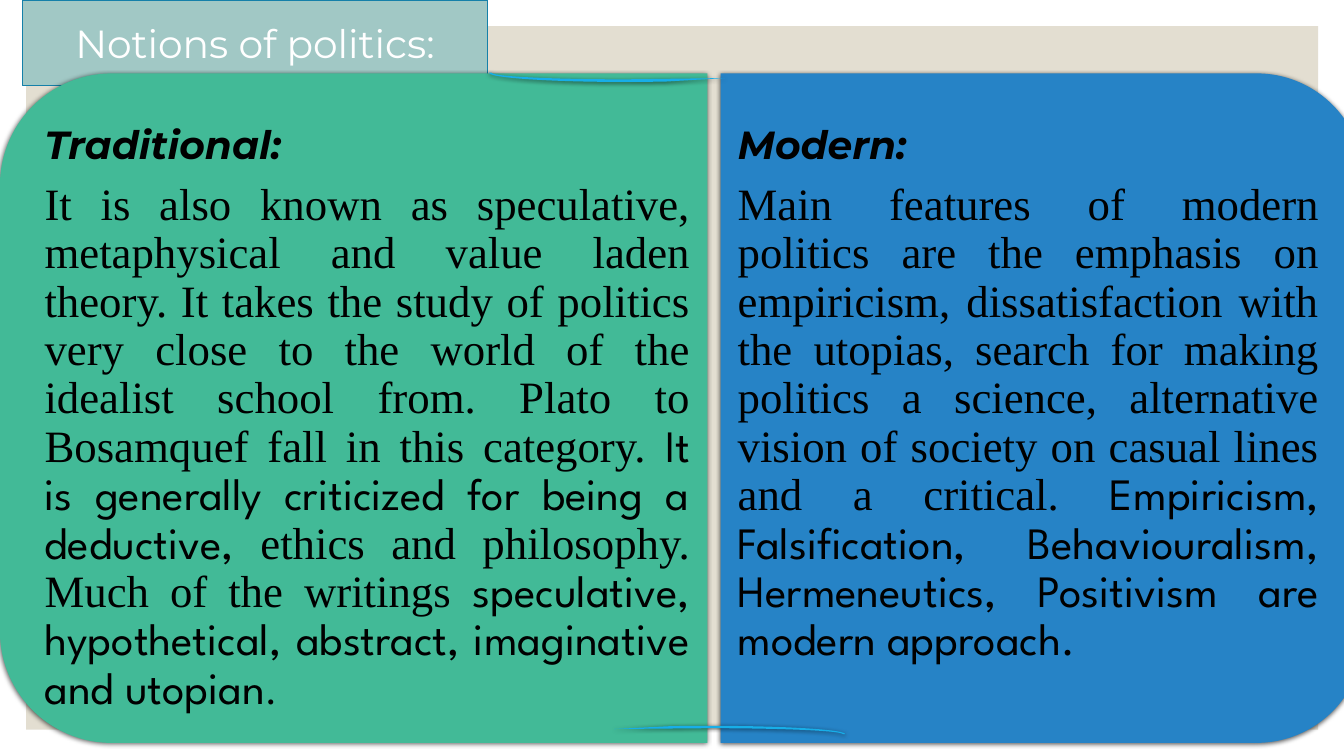
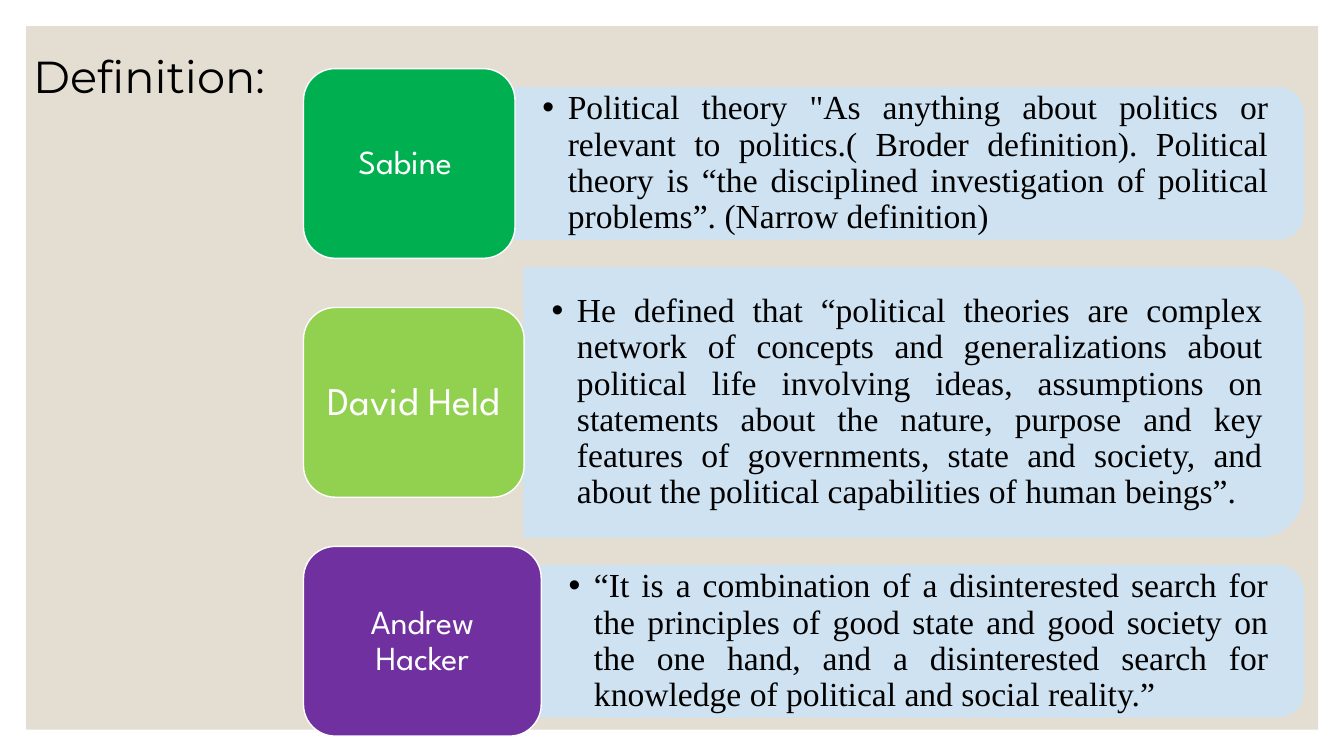
from lxml.etree import SubElement
from pptx import Presentation
from pptx.dml.color import RGBColor
from pptx.enum.shapes import MSO_SHAPE
from pptx.enum.text import MSO_ANCHOR, MSO_AUTO_SIZE, PP_ALIGN
from pptx.oxml.ns import qn
from pptx.util import Cm, Pt

BLACK = RGBColor(0x00, 0x00, 0x00)
WHITE = RGBColor(0xFF, 0xFF, 0xFF)
SAND = RGBColor(0xE3, 0xDE, 0xD1)
MIST = RGBColor(0xA1, 0xC8, 0xC5)
TEAL = RGBColor(0x15, 0x80, 0xA9)
MINT = RGBColor(0x42, 0xBA, 0x97)
BLUE = RGBColor(0x26, 0x83, 0xC6)
CYAN = RGBColor(0x17, 0xAE, 0xE8)
PALE_BLUE = RGBColor(0xCD, 0xE3, 0xF5)
GREEN = RGBColor(0x00, 0xB0, 0x50)
LIME = RGBColor(0x92, 0xD0, 0x50)
PURPLE = RGBColor(0x70, 0x30, 0xA0)

TITLE_FONT = "Montserrat"
SANS = "League Spartan"
SERIF = "Times New Roman"

CORNER_INSET = 0.0488
SWOOSH_ARC = (0.125, 11.423, 204.577, 108, 0.125)

LABEL_LEFT = 7.65
LABEL_TOP = 1.73
LABEL_HEIGHT = 4.78
LABEL_PITCH = 6.02
PANEL_RIGHT = 32.84

TRADITIONAL = [
    ("It is also known as speculative, metaphysical and value laden theory. "
     "It takes the study of politics very close to the world of the idealist "
     "school from. Plato to Bosamquef fall in this category.", SERIF, 32),
    (" It is generally criticized for being a deductive,", SANS, 32),
    (" ethics and philosophy. Much of the writings ", SERIF, 32),
    ("speculative, hypothetical, abstract, imaginative and utopian", SANS, 32),
    (".", SANS, 28),
]
MODERN = [
    ("Main features of modern politics are the emphasis on empiricism, "
     "dissatisfaction with the utopias, search for making politics a science, "
     "alternative vision of society on casual lines and a critical. ", SERIF, 32),
    ("Empiricism, Falsification, Behaviouralism, Hermeneutics, Positivism "
     "are modern approach.", SANS, 32),
]
DEFINITIONS = [
    ("Sabine ", 24, GREEN, 5.33, 3.81,
     "Political theory \"As anything about politics or relevant to politics."
     "( Broder definition). Political theory is “the disciplined investigation "
     "of political problems”. (Narrow definition)"),
    ("David Held", 28, LIME, 5.56, 6.78,
     "He defined that “political theories are complex network of concepts and "
     "generalizations about political life involving ideas, assumptions on "
     "statements about the nature, purpose and key features of governments, "
     "state and society, and about the political capabilities of human beings”."),
    ("Andrew Hacker", 24, PURPLE, 5.99, 3.81,
     "“It is a combination of a disinterested search for the principles of good "
     "state and good society on the one hand, and a disinterested search for "
     "knowledge of political and social reality.”"),
]


def add_run(paragraph, text, font, size, color=BLACK, emphasis=False):
    run = paragraph.add_run()
    run.text = text
    run.font.name = font
    run.font.size = Pt(size)
    run.font.color.rgb = color
    run.font.bold = emphasis
    run.font.italic = emphasis


def format_paragraph(paragraph, align, after):
    paragraph.alignment = align
    paragraph.line_spacing = 0.9
    paragraph.space_after = Pt(after)


def set_insets(frame, left, top, right, bottom):
    frame.margin_left, frame.margin_top = Cm(left), Cm(top)
    frame.margin_right, frame.margin_bottom = Cm(right), Cm(bottom)


def add_preset(slide, preset, left, top, width, height, fill, line=None):
    shape = slide.shapes.add_shape(preset, Cm(left), Cm(top), Cm(width), Cm(height))
    shape.shadow.inherit = False
    shape.fill.solid()
    shape.fill.fore_color.rgb = fill
    if line is None:
        shape.line.fill.background()
    else:
        shape.line.color.rgb = line
        shape.line.width = Pt(1)
    return shape


def add_soft_shadow(shape):
    effects = shape._element.spPr.find(qn("a:effectLst"))
    shadow = SubElement(effects, qn("a:outerShdw"), blurRad=str(Pt(3)),
                        dist=str(Pt(1)), dir="5400000", rotWithShape="0")
    black = SubElement(shadow, qn("a:srgbClr"), val="000000")
    SubElement(black, qn("a:alpha"), val="63000")


def add_panel(slide, left, top, width, height, rotation, fill, line=None):
    shift = (width - height) / 2
    panel = add_preset(slide, MSO_SHAPE.ROUND_2_SAME_RECTANGLE, left + shift,
                       top - shift, height, width, fill, line)
    panel.rotation = rotation
    inset = height * CORNER_INSET
    text_left = left + inset if rotation == 270 else left
    box = slide.shapes.add_textbox(Cm(text_left), Cm(top + inset),
                                   Cm(width - inset), Cm(height - 2 * inset))
    box.text_frame.word_wrap = True
    return panel, box.text_frame


def add_notion(slide, left, width, rotation, fill, insets, heading, passages):
    panel, frame = add_panel(slide, left, 1.85, width, 16.87, rotation, fill)
    add_soft_shadow(panel)
    set_insets(frame, *insets)
    opening = frame.paragraphs[0]
    format_paragraph(opening, PP_ALIGN.LEFT, 10)
    add_run(opening, heading, TITLE_FONT, 28, emphasis=True)
    body = frame.add_paragraph()
    format_paragraph(body, PP_ALIGN.JUSTIFY, 11)
    for text, font, size in passages:
        add_run(body, text, font, size)


def add_swoosh(slide, left, top, height, rotation):
    swoosh = add_preset(slide, MSO_SHAPE.CIRCULAR_ARROW, left, top, 6.93, height, CYAN)
    for index, value in enumerate(SWOOSH_ARC):
        swoosh.adjustments[index] = value
    swoosh.rotation = rotation
    swoosh._element.spPr.find(qn("a:xfrm")).set("flipV", "1")
    add_soft_shadow(swoosh)


def add_bullet(paragraph):
    properties = paragraph._p.get_or_add_pPr()
    properties.set("marL", str(Cm(0.64)))
    properties.set("indent", str(Cm(-0.64)))
    SubElement(properties, qn("a:buFont"), typeface="Arial")
    SubElement(properties, qn("a:buChar"), char="•")


def add_definition(slide, row, author, size, color, width, height, text):
    label_top = LABEL_TOP + row * LABEL_PITCH
    left = LABEL_LEFT + width
    top = label_top + (LABEL_HEIGHT - height) / 2
    panel, frame = add_panel(slide, left, top, PANEL_RIGHT - left, height, 90,
                             PALE_BLUE, PALE_BLUE)
    for tint in panel._element.spPr.iter(qn("a:srgbClr")):
        SubElement(tint, qn("a:alpha"), val="90000")
    frame.vertical_anchor = MSO_ANCHOR.MIDDLE
    set_insets(frame, 0.69, 0.36, 0.69, 0.36)
    definition = frame.paragraphs[0]
    format_paragraph(definition, PP_ALIGN.JUSTIFY, 4)
    add_bullet(definition)
    add_run(definition, text, SERIF, 24)

    label = add_preset(slide, MSO_SHAPE.ROUNDED_RECTANGLE, LABEL_LEFT, label_top,
                       width, LABEL_HEIGHT, color, WHITE)
    label.text_frame.word_wrap = True
    label.text_frame.vertical_anchor = MSO_ANCHOR.MIDDLE
    name = label.text_frame.paragraphs[0]
    format_paragraph(name, PP_ALIGN.CENTER, 8)
    add_run(name, author, SANS, size, WHITE)


def add_titled_slide(deck, text, box, size, color, align):
    slide = deck.slides.add_slide(deck.slide_layouts[5])
    title = slide.shapes.title
    title.left, title.top, title.width, title.height = (Cm(length) for length in box)
    frame = title.text_frame
    frame.word_wrap = True
    frame.auto_size = MSO_AUTO_SIZE.NONE
    frame.vertical_anchor = MSO_ANCHOR.MIDDLE
    frame.paragraphs[0].alignment = align
    add_run(frame.paragraphs[0], text, TITLE_FONT, size, color)
    return slide


def add_backdrop(slide):
    backdrop = add_preset(slide, MSO_SHAPE.RECTANGLE, 0.66, 0.66, 32.56, 17.73, SAND)
    slide.slide_layout.shapes._spTree.insert(2, backdrop._element)


def style_title_tab(title):
    outline = SubElement(title._element.spPr, qn("a:prstGeom"), prst="round2DiagRect")
    SubElement(outline, qn("a:avLst"))
    title.fill.solid()
    title.fill.fore_color.rgb = MIST
    title.line.color.rgb = TEAL
    title.line.width = Pt(1)


def build_notions(deck):
    slide = add_titled_slide(deck, "Notions of politics:", (0.56, 0, 11.73, 2.16),
                             28, WHITE, PP_ALIGN.CENTER)
    add_backdrop(slide)
    style_title_tab(slide.shapes.title)
    add_notion(slide, 0, 17.83, 270, MINT, (0.3, 0.48, 0.43, 0.48),
               "Traditional:", TRADITIONAL)
    add_notion(slide, 18.16, 16.21, 90, BLUE, (0.43, 0.48, 0.3, 0.48),
               "Modern:", MODERN)
    add_swoosh(slide, 12.29, 1.57, 0.53, 0)
    add_swoosh(slide, 14.4, 18.26, 0.48, 180)


def build_definitions(deck):
    slide = add_titled_slide(deck, "Definition:", (0.58, 1.09, 7.62, 1.63),
                             32, BLACK, PP_ALIGN.LEFT)
    for row, entry in enumerate(DEFINITIONS):
        add_definition(slide, row, *entry)


def main():
    deck = Presentation()
    deck.slide_width, deck.slide_height = Cm(33.87), Cm(19.05)
    build_notions(deck)
    build_definitions(deck)
    deck.save("out.pptx")


if __name__ == "__main__":
    main()
